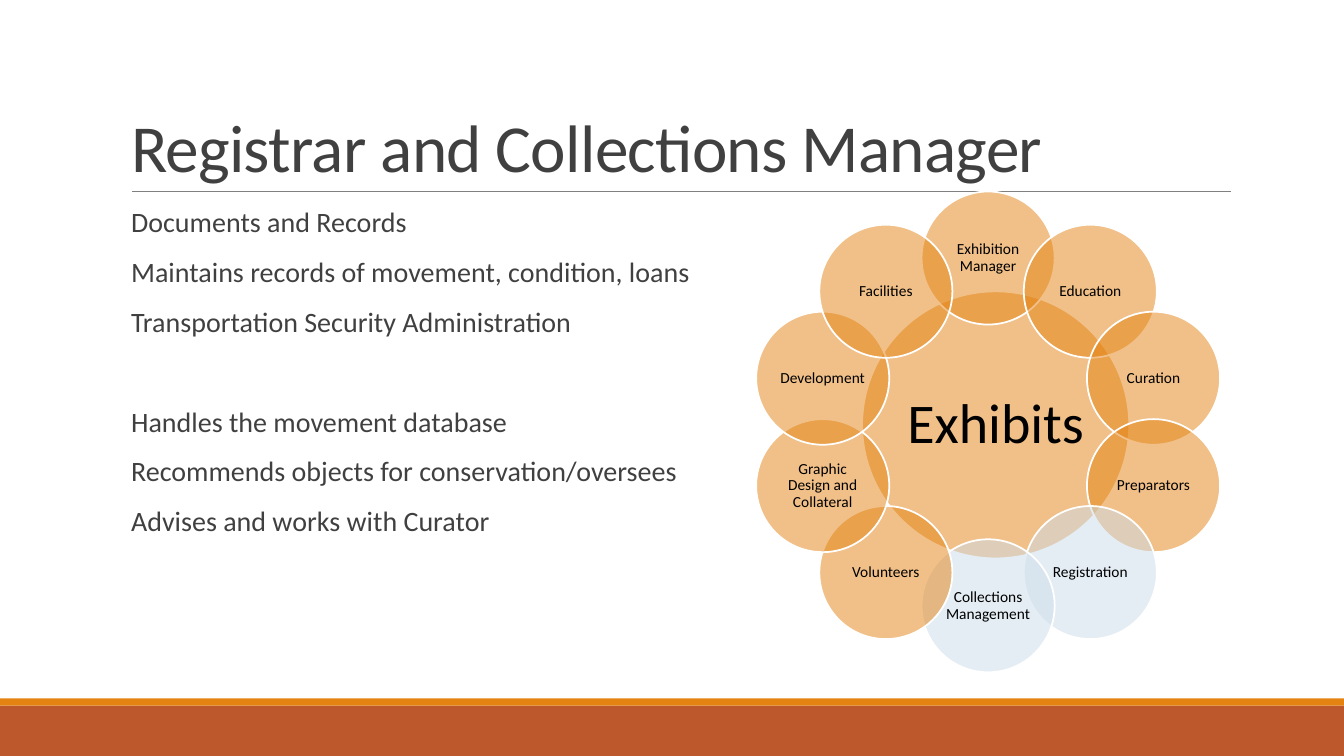
"""Build the Registrar and Collections Manager slide."""
from math import cos, pi, sin

from lxml.etree import SubElement
from pptx import Presentation
from pptx.dml.color import RGBColor
from pptx.enum.shapes import MSO_CONNECTOR, MSO_SHAPE
from pptx.enum.text import MSO_ANCHOR, MSO_AUTO_SIZE, PP_ALIGN
from pptx.oxml.ns import qn
from pptx.util import Inches, Pt

WIDTH, HEIGHT = 13.33, 7.5
FONT, GREY = "Calibri", "404040"
ORANGE, RUST, PALE = "E48312", "BD582C", "CCDDEA"
TITLE = "Registrar and Collections Manager"
DUTIES = [
    ["Documents and Records",
     "Maintains records of movement, condition, loans",
     "Transportation Security Administration"],
    ["Handles the movement database",
     "Recommends objects for conservation/oversees",
     "Advises and works with Curator"],
]
HUB = ("Exhibits", 9.875, 4.215, 2.65)
RING = (9.8, 4.285, 1.725, 1.32)
TEAMS = [
    ("Exhibition Manager", ORANGE), ("Education", ORANGE),
    ("Curation", ORANGE), ("Preparators", ORANGE),
    ("Registration", PALE), ("Collections Management", PALE),
    ("Volunteers", ORANGE), ("Graphic Design and Collateral", ORANGE),
    ("Development", ORANGE), ("Facilities", ORANGE),
]


def color(code):
    return RGBColor.from_string(code)


def write(shape, lines, size, ink=GREY, align=PP_ALIGN.LEFT, anchor=MSO_ANCHOR.TOP,
          inset=(0.1, 0.05), space=0.9, gaps=(), after=0, indent=0, track=0):
    frame = shape.text_frame
    frame.word_wrap = True
    frame.auto_size = MSO_AUTO_SIZE.NONE
    frame.vertical_anchor = anchor
    frame.margin_left = frame.margin_right = Inches(inset[0])
    frame.margin_top = frame.margin_bottom = Inches(inset[1])
    for index, line in enumerate(lines):
        para = frame.paragraphs[0] if index == 0 else frame.add_paragraph()
        props = para._p.get_or_add_pPr()
        props.set("marL", str(Inches(indent)))
        props.set("indent", "0")
        SubElement(props, qn("a:buNone"))
        para.alignment, para.line_spacing = align, space
        para.space_before = Pt(gaps[index] if gaps else 0)
        para.space_after = Pt(after)
        run = para.add_run()
        run.text = line
        run.font.name, run.font.size = FONT, Pt(size)
        run.font.color.rgb = color(ink)
        if track:
            run._r.get_or_add_rPr().set("spc", str(int(track * 100)))


def place(shape, left, top, width, height):
    shape.left, shape.top = Inches(left), Inches(top)
    shape.width, shape.height = Inches(width), Inches(height)


def band(slide, top, height, fill):
    bar = slide.shapes.add_shape(MSO_SHAPE.RECTANGLE, 0, Inches(top),
                                 Inches(WIDTH), Inches(height))
    bar.shadow.inherit = False
    bar.fill.solid()
    bar.fill.fore_color.rgb = color(fill)
    bar.line.fill.background()


def disc(slide, label, x, y, size, fill, points, inset):
    oval = slide.shapes.add_shape(MSO_SHAPE.OVAL, Inches(x - size / 2),
                                  Inches(y - size / 2), Inches(size), Inches(size))
    oval.shadow.inherit = False
    oval.fill.solid()
    oval.fill.fore_color.rgb = color(fill)
    tint = oval._element.spPr.find(qn("a:solidFill"))[0]
    SubElement(tint, qn("a:alpha"), val="50000")
    oval.line.color.rgb = color("FFFFFF")
    oval.line.width = Pt(1.25)
    write(oval, [label], points, ink="000000", align=PP_ALIGN.CENTER,
          anchor=MSO_ANCHOR.MIDDLE, inset=(inset, inset))


def main():
    deck = Presentation()
    deck.slide_width, deck.slide_height = Inches(WIDTH), Inches(HEIGHT)
    slide = deck.slides.add_slide(deck.slide_layouts[1])
    title, body = slide.placeholders

    band(slide, 7, 0.5, RUST)
    band(slide, 6.93, 0.07, ORANGE)
    rule = slide.shapes.add_connector(MSO_CONNECTOR.STRAIGHT, Inches(1.31), Inches(1.9),
                                      Inches(12.21), Inches(1.9))
    rule.line.color.rgb = color("808080")
    rule.line.width = Pt(0.5)
    SubElement(rule._element.spPr, qn("a:effectLst"))

    place(title, 1.2, 0.31, 11, 1.59)
    write(title, [TITLE], 48, anchor=MSO_ANCHOR.BOTTOM, space=0.85, track=-0.5)
    place(body, 1.2, 2.02, 11, 4.4)
    lines = [line for group in DUTIES for line in group]
    gaps = [12] * len(lines)
    gaps[0], gaps[len(DUTIES[0])] = 0, 47.5
    write(body, lines, 20, inset=(0, 0.05), gaps=gaps, after=2, indent=0.1)

    disc(slide, *HUB, ORANGE, 40, 0.06)
    x, y, radius, size = RING
    for index, (team, fill) in enumerate(TEAMS):
        turn = 2 * pi * index / len(TEAMS)
        disc(slide, team, x + radius * sin(turn), y - radius * cos(turn),
             size, fill, 11, 0.02)
    deck.save("out.pptx")


if __name__ == "__main__":
    main()
